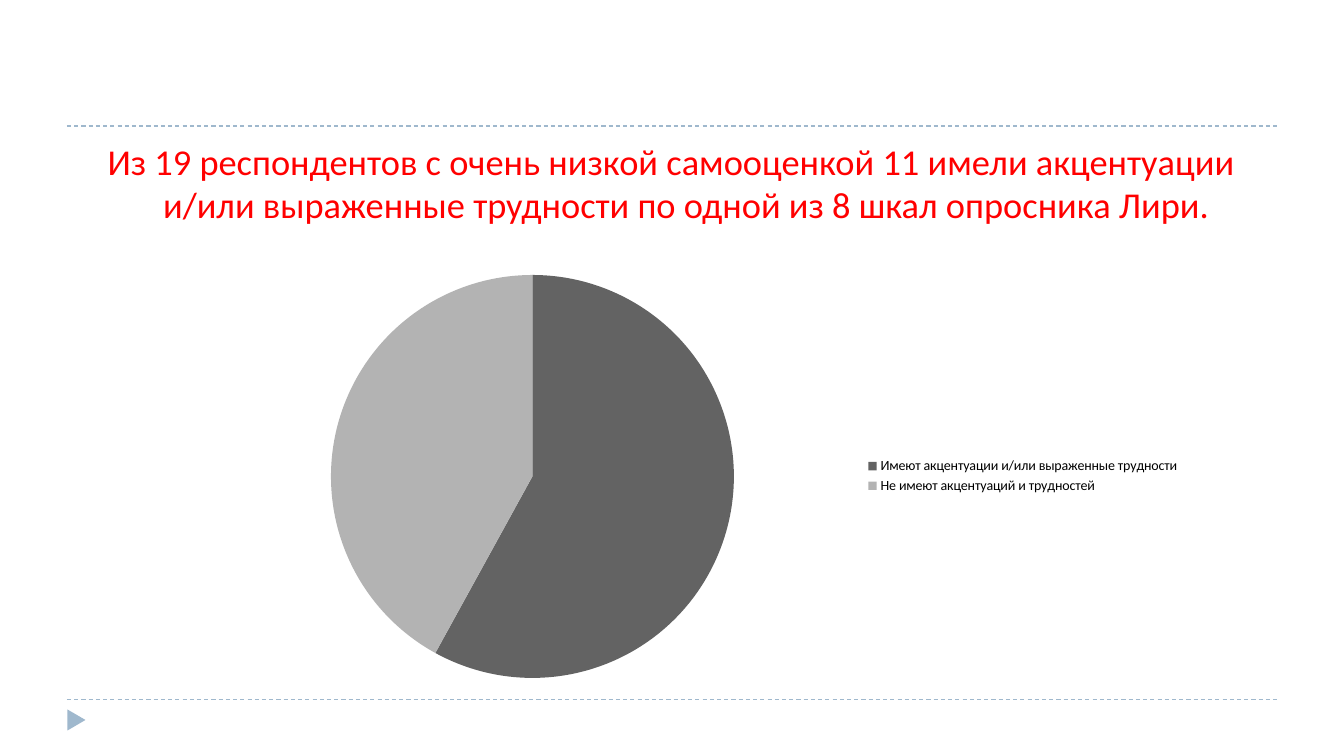
"""Build a slide with a heading and a pie chart of respondents."""
from lxml import etree
from pptx import Presentation
from pptx.chart.data import CategoryChartData
from pptx.dml.color import RGBColor
from pptx.enum.chart import XL_CHART_TYPE as CHART, XL_LEGEND_POSITION as LEGEND
from pptx.enum.dml import MSO_LINE_DASH_STYLE as DASH
from pptx.enum.shapes import MSO_CONNECTOR as CONN, MSO_SHAPE as SHAPE
from pptx.enum.text import PP_ALIGN as ALIGN
from pptx.oxml.ns import qn
from pptx.util import Emu, Pt

RED = RGBColor(0xFF, 0x00, 0x00)
BLACK = RGBColor(0x00, 0x00, 0x00)
BLUE = RGBColor(0x9F, 0xB8, 0xCD)
DARK = RGBColor(0x63, 0x63, 0x63)
LIGHT = RGBColor(0xB3, 0xB3, 0xB3)

HEADING = ("Из 19 респондентов с очень низкой самооценкой 11 имели акцентуации "
           "и/или выраженные трудности по одной из 8 шкал опросника Лири.")
SLICES = [
    ("Имеют акцентуации и/или выраженные трудности", 58, DARK),
    ("Не имеют акцентуаций и трудностей", 42, LIGHT),
]
HEADING_FORMAT = {"name": "Calibri", "size": Pt(26)}
CHART_FORMAT = {"name": "Calibri", "size": Pt(10)}

SLIDE = (1344, 756)
RULE_LEFT, RULE_RIGHT = 67, 1277
RULE_TOPS = (700, 126)
MARKER = (66, 711, 21, 18)
HEADING_BOX = (67, 134, 1210, 544)
HANGING = 30
CHART_BOX = (202, 261, 988, 430)
PIE_BOX = (331, 275, 403, 403)


def px(n):
    return Emu(round(n * 914400 / 100.8))


def box(lengths):
    return [px(n) for n in lengths]


def set_font(font, values, color):
    for key, value in values.items():
        setattr(font, key, value)
    font.color.rgb = color


def add_rule(slide, top):
    c = slide.shapes.add_connector(CONN.STRAIGHT, *box((RULE_LEFT, top, RULE_RIGHT, top)))
    c.line.color.rgb = BLUE
    c.line.width = Pt(0.75)
    c.line.dash_style = DASH.DASH
    etree.SubElement(c._element.spPr, qn("a:effectLst"))


def add_marker(slide):
    sp = slide.shapes.add_shape(SHAPE.ISOSCELES_TRIANGLE, *box(MARKER))
    sp.rotation = 90
    sp.shadow.inherit = False
    sp.fill.solid()
    sp.fill.fore_color.rgb = BLUE
    sp.line.fill.background()


def add_heading(slide):
    tf = slide.shapes.add_textbox(*box(HEADING_BOX)).text_frame
    tf.word_wrap = True
    p = tf.paragraphs[0]
    p.alignment = ALIGN.CENTER
    pPr = p._p.get_or_add_pPr()
    pPr.set("marL", str(px(HANGING)))
    pPr.set("indent", str(-px(HANGING)))
    r = p.add_run()
    r.text = HEADING
    set_font(r.font, HEADING_FORMAT, RED)


def place_pie(chart):
    left, top, width, height = CHART_BOX
    x, y, w, h = PIE_BOX
    area = chart._chartSpace.find(".//" + qn("c:plotArea"))
    for old in area.findall(qn("c:layout")):
        area.remove(old)
    layout = etree.Element(qn("c:layout"))
    area.insert(0, layout)
    manual = etree.SubElement(layout, qn("c:manualLayout"))
    settings = {
        "layoutTarget": "inner", "xMode": "edge", "yMode": "edge",
        "x": (x - left) / width, "y": (y - top) / height,
        "w": w / width, "h": h / height,
    }
    for tag, value in settings.items():
        etree.SubElement(manual, qn("c:" + tag)).set("val", str(value))


def add_pie(slide):
    data = CategoryChartData()
    data.categories = [name for name, _, _ in SLICES]
    data.add_series("Series 1", [value for _, value, _ in SLICES])
    chart = slide.shapes.add_chart(CHART.PIE, *box(CHART_BOX), data).chart
    chart.has_title = False
    chart.has_legend = True
    chart.legend.position = LEGEND.RIGHT
    chart.legend.include_in_layout = False
    set_font(chart.font, CHART_FORMAT, BLACK)
    plot = chart.plots[0]
    plot.vary_by_categories = True
    for i, (_, _, color) in enumerate(SLICES):
        fmt = plot.series[0].points[i].format
        fmt.fill.solid()
        fmt.fill.fore_color.rgb = color
        fmt.line.fill.background()
    place_pie(chart)


def main():
    prs = Presentation()
    prs.slide_width, prs.slide_height = box(SLIDE)
    s = prs.slides.add_slide(prs.slide_layouts[6])
    for top in RULE_TOPS:
        add_rule(s, top)
    add_marker(s)
    add_heading(s)
    add_pie(s)
    prs.save("out.pptx")


if __name__ == "__main__":
    main()
